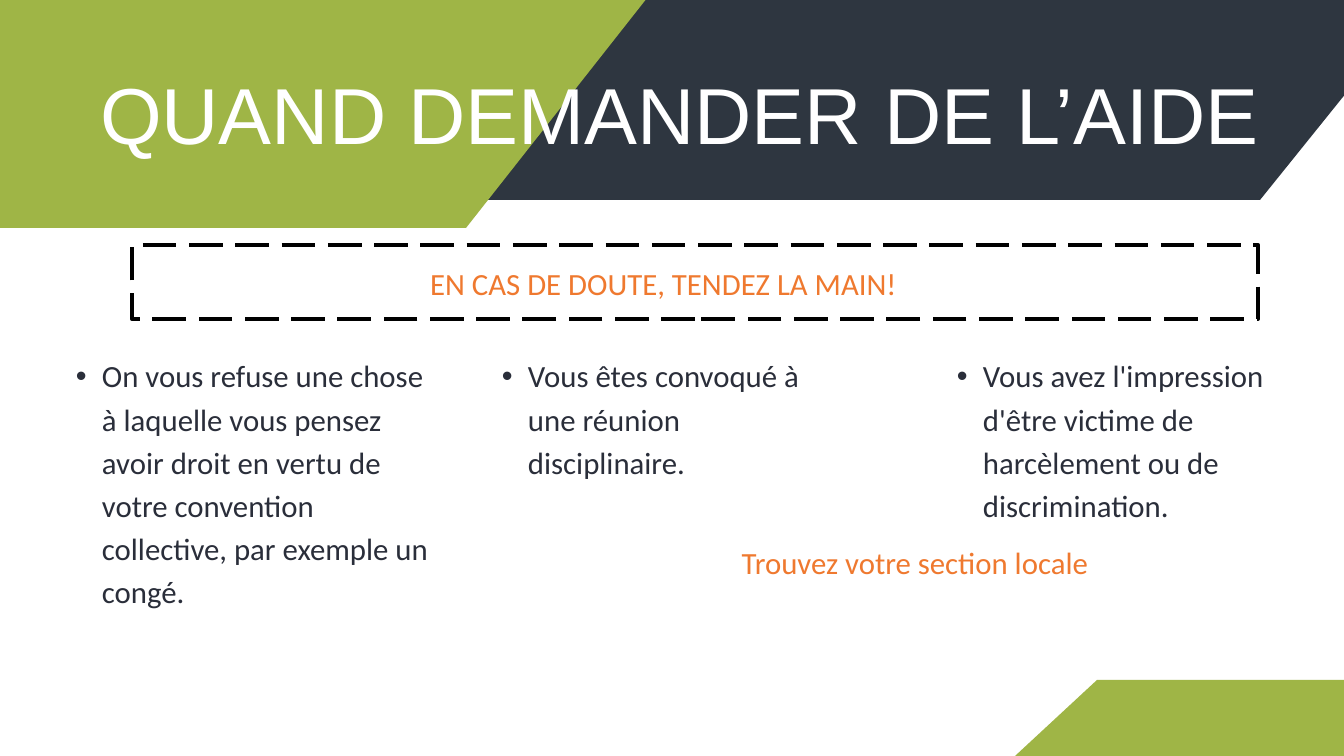
from pptx import Presentation
from pptx.dml.color import RGBColor
from pptx.enum.dml import MSO_LINE
from pptx.enum.shapes import MSO_SHAPE
from pptx.enum.text import PP_ALIGN
from pptx.oxml.ns import qn
from pptx.util import Emu, Pt
from lxml.etree import SubElement

NAVY = RGBColor(0x2E, 0x36, 0x40)
GREEN = RGBColor(0x9F, 0xB5, 0x46)
ORANGE = RGBColor(0xEF, 0x79, 0x2F)
INK = RGBColor(0x2A, 0x2E, 0x3A)
WHITE = RGBColor(0xFF, 0xFF, 0xFF)
BLACK = RGBColor(0x00, 0x00, 0x00)

PX = 914400 / 67.2
WIDTH, HEIGHT = 1344, 756

BANDS = [
    (NAVY, [(1260, 200), (298, 200), (-24, -200), (1582, -200)]),
    (GREEN, [(466, 228), (-274, 228), (-460, -7), (651, -7)]),
    (GREEN, [(1097, 680), (1357, 680), (1439, 756), (1015, 756)]),
]
FRAME = (132, 245, 1126, 74)

TITLE = dict(name="Arial", size=Pt(85), color=WHITE, spacing=Pt(102), indent=(22, 0))
CALL = dict(name="Calibri", size=Pt(33), color=ORANGE, spacing=Pt(46.2), align=PP_ALIGN.CENTER)
REASON = dict(name="Calibri", size=Pt(33), color=INK, spacing=Pt(46.2), indent=(52, -26), bullet="•")

REASON_TOP = 351
TEXTS = [
    ((78, 65, 1191, 95), "QUAND DEMANDER DE L’AIDE", TITLE),
    ((154, 259, 1019, 41), "EN CAS DE DOUTE, TENDEZ LA MAIN!", CALL),
    ((50, REASON_TOP, 387, 255),
     "On vous refuse une chose à laquelle vous pensez avoir droit en vertu de "
     "votre convention collective, par exemple un congé.", REASON),
    ((476, REASON_TOP, 334, 128), "Vous êtes convoqué à une réunion disciplinaire.", REASON),
    ((931, REASON_TOP, 405, 170),
     "Vous avez l'impression d'être victime de harcèlement ou de discrimination.", REASON),
    ((687, 538, 456, 42), "Trouvez votre section locale", CALL),
]


def px(length):
    return Emu(round(length * PX))


def add_band(page, color, points):
    builder = page.shapes.build_freeform(*points[0], scale=PX)
    builder.add_line_segments(points[1:], close=True)
    band = builder.convert_to_shape()
    band.shadow.inherit = False
    band.fill.solid()
    band.fill.fore_color.rgb = color
    band.line.fill.background()


def add_frame(page, place):
    frame = page.shapes.add_shape(MSO_SHAPE.RECTANGLE, *map(px, place))
    frame.shadow.inherit = False
    frame.fill.background()
    frame.line.color.rgb = BLACK
    frame.line.width = Pt(4.5)
    frame.line.dash_style = MSO_LINE.LONG_DASH


def add_text(page, place, text, style):
    box = page.shapes.add_textbox(*map(px, place)).text_frame
    box.word_wrap = True
    for side in ("left", "top", "right", "bottom"):
        setattr(box, f"margin_{side}", 0)
    para = box.paragraphs[0]
    para.alignment = style.get("align", PP_ALIGN.LEFT)
    para.line_spacing = style["spacing"]
    span = para.add_run()
    span.text = text
    for key in ("name", "size"):
        setattr(span.font, key, style[key])
    span.font.color.rgb = style["color"]
    props = para._p.get_or_add_pPr()
    for key, length in zip(("marL", "indent"), style.get("indent", ())):
        props.set(key, str(px(length)))
    if "bullet" in style:
        SubElement(props, qn("a:buFont"), typeface="Arial")
        SubElement(props, qn("a:buChar"), char=style["bullet"])


def main():
    deck = Presentation()
    deck.slide_width, deck.slide_height = px(WIDTH), px(HEIGHT)
    page = deck.slides.add_slide(deck.slide_layouts[6])
    for color, points in BANDS:
        add_band(page, color, points)
    add_frame(page, FRAME)
    for place, text, style in TEXTS:
        add_text(page, place, text, style)
    deck.save("out.pptx")


if __name__ == "__main__":
    main()
